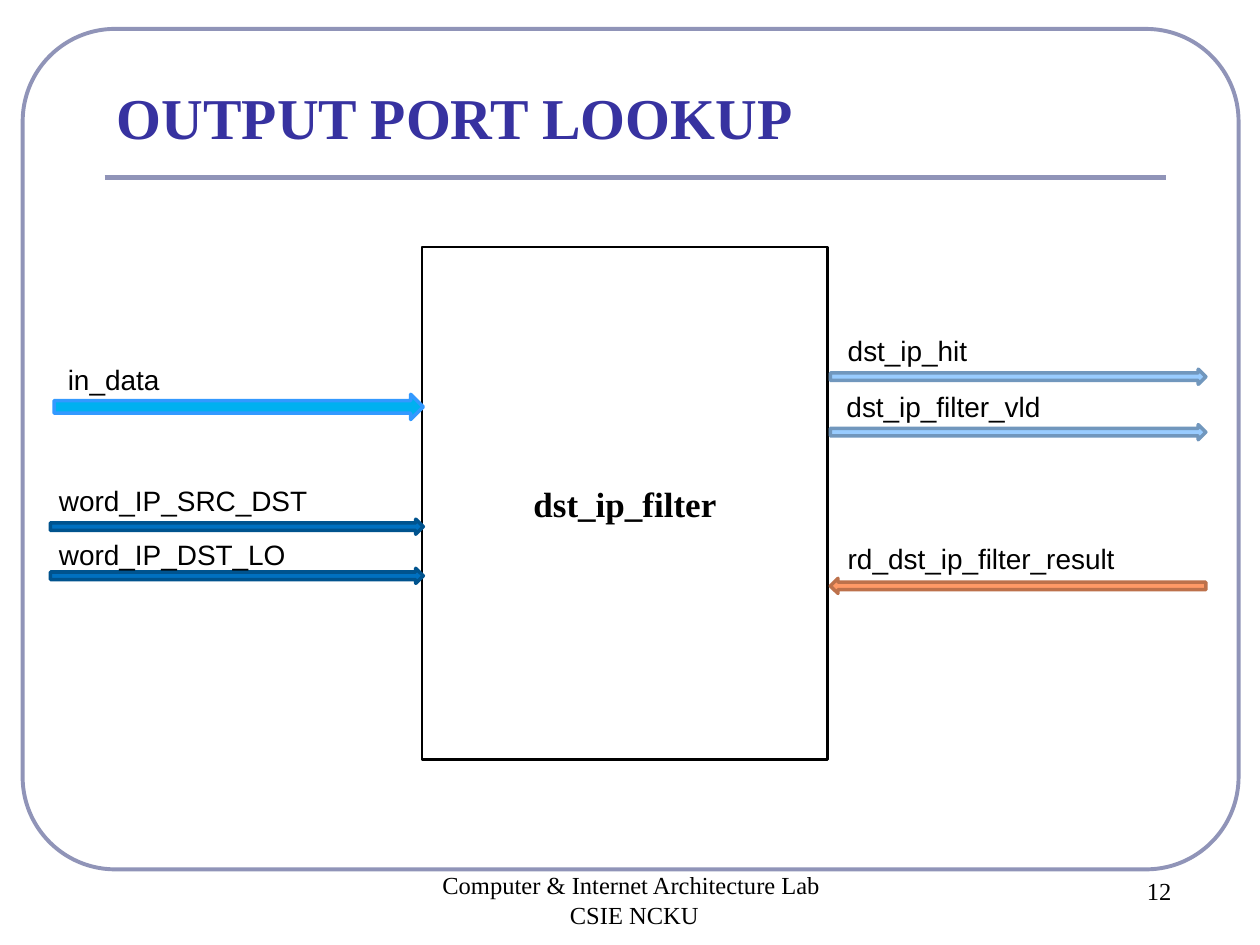
import pptx
import pptx.util
import pptx.dml.color
import pptx.enum.shapes
import pptx.enum.text
import pptx.oxml.ns
import lxml.etree

Inches = pptx.util.Inches
Shapes = pptx.enum.shapes.MSO_SHAPE
Align = pptx.enum.text.PP_ALIGN
Anchor = pptx.enum.text.MSO_ANCHOR
SERIF = "Times New Roman"


def color(value):
    """Return the colour for a hex string."""
    return pptx.dml.color.RGBColor.from_string(value)


def write(shape, text, size=16, font="Arial", ink="000000", bold=False,
          align=Align.LEFT, anchor=Anchor.TOP, inset=None):
    """Fill a shape with text, one paragraph for each line."""
    frame = shape.text_frame
    frame.word_wrap = True
    frame.vertical_anchor = anchor
    if inset is not None:
        frame.margin_left = frame.margin_right = Inches(inset)
        frame.margin_top = frame.margin_bottom = Inches(inset)
    for index, line in enumerate(text.split("\n")):
        para = frame.add_paragraph() if index else frame.paragraphs[0]
        para.alignment = align
        span = para.add_run()
        span.text = line
        span.font.size = pptx.util.Pt(size)
        span.font.name = font
        span.font.bold = bold
        span.font.color.rgb = color(ink)


def add_text(page, text, left, top, width, height, **style):
    """Add a text box."""
    box = page.shapes.add_textbox(
        Inches(left), Inches(top), Inches(width), Inches(height))
    write(box, text, **style)


def add_shape(page, kind, left, top, width, height, line, weight, fill=None):
    """Add a preset shape with an outline and an optional fill."""
    shape = page.shapes.add_shape(
        kind, Inches(left), Inches(top), Inches(width), Inches(height))
    shape.shadow.inherit = False
    if fill:
        shape.fill.solid()
        shape.fill.fore_color.rgb = color(fill)
    else:
        shape.fill.background()
    shape.line.color.rgb = color(line)
    shape.line.width = pptx.util.Pt(weight)
    return shape


def add_rule(page, left, right, top, line, weight):
    """Add a horizontal line."""
    rule = page.shapes.add_connector(
        pptx.enum.shapes.MSO_CONNECTOR.STRAIGHT,
        Inches(left), Inches(top), Inches(right), Inches(top))
    rule.line.color.rgb = color(line)
    rule.line.width = pptx.util.Pt(weight)
    lxml.etree.SubElement(
        rule._element.spPr, pptx.oxml.ns.qn("a:effectLst"))


def add_signal(page, name, label_at, arrow_at, colors, rotation=0):
    """Add a block arrow with its signal name above it."""
    fill, line = colors
    arrow = add_shape(page, Shapes.RIGHT_ARROW, *arrow_at, line, 2, fill)
    arrow.rotation = rotation
    add_text(page, name, *label_at, 3, 0.37)


def main():
    """Build the slide and save it."""
    deck = pptx.Presentation()
    deck.slide_width, deck.slide_height = Inches(10), Inches(7.5)
    page = deck.slides.add_slide(deck.slide_layouts[6])

    border = add_shape(page, Shapes.ROUNDED_RECTANGLE,
                       0.18, 0.23, 9.65, 6.67, "9094B8", 2.25)
    border.adjustments[0] = 0.11
    add_rule(page, 0.83, 9.25, 1.41, "9094B8", 3)
    add_text(page, "OUTPUT PORT LOOKUP", 0.83, 0.6, 8.42, 0.65, size=33,
             font=SERIF, ink="3732A0", bold=True, anchor=Anchor.BOTTOM)
    add_text(page, "Computer & Internet Architecture Lab \nCSIE NCKU",
             2.87, 6.86, 4.33, 0.5, size=14, font=SERIF, align=Align.CENTER)
    add_text(page, "12", 8.66, 6.9, 1.08, 0.5, size=14, font=SERIF,
             align=Align.CENTER)

    module = add_shape(page, Shapes.RECTANGLE,
                       3.35, 1.96, 3.22, 4.07, "000000", 1.5, "FFFFFF")
    write(module, "dst_ip_filter", size=20, font=SERIF, bold=True,
          align=Align.CENTER, anchor=Anchor.MIDDLE, inset=0)

    add_signal(page, "in_data", (0.44, 2.83), (0.43, 3.13, 2.93, 0.2),
               ("00B0F0", "3399FF"))
    words = [("word_IP_SRC_DST", 3.79, 4.12), ("word_IP_DST_LO", 4.22, 4.51)]
    for name, label_top, arrow_top in words:
        add_signal(page, name, (0.37, label_top),
                   (0.4, arrow_top, 2.96, 0.12), ("0070C0", "00538E"))

    sky, orange = ("99CCFF", "7197BD"), ("FF9966", "BD714B")
    right_signals = [
        ("dst_ip_hit", 6.63, 2.6, 2.93, sky, 0),
        ("dst_ip_filter_vld", 6.62, 3.04, 3.37, sky, 0),
        ("rd_dst_ip_filter_result", 6.63, 4.25, 4.59, orange, 180),
    ]
    for name, left, label_top, arrow_top, colors, rotation in right_signals:
        add_signal(page, name, (left, label_top),
                   (6.59, arrow_top, 2.98, 0.12), colors, rotation)

    deck.save("out.pptx")


if __name__ == "__main__":
    main()
